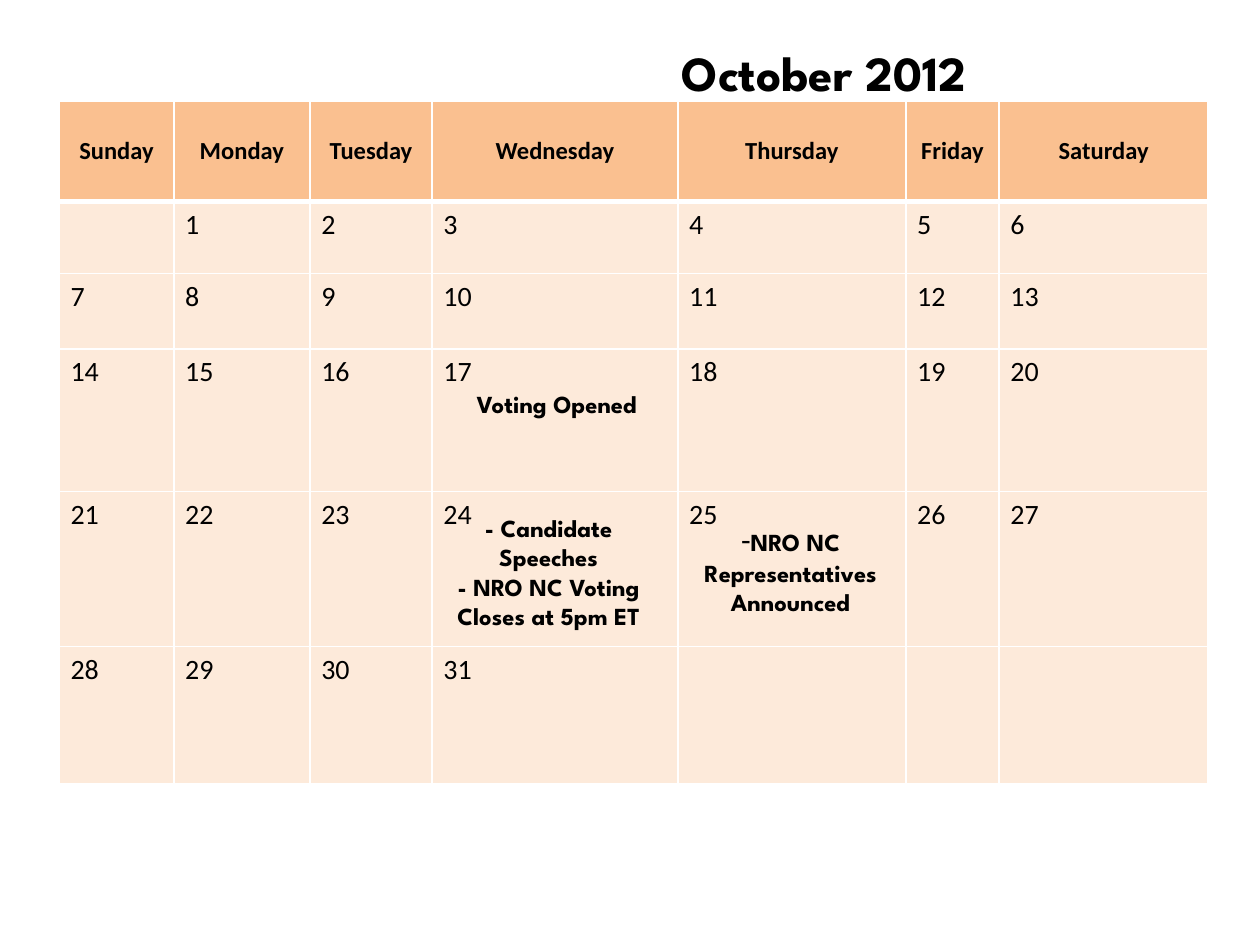
"""Build a one-slide October 2012 calendar with voting events."""
import pptx
import pptx.dml.color
import pptx.enum.text
import pptx.oxml
import pptx.oxml.ns
import pptx.util
from pptx.util import Inches

ALIGN = pptx.enum.text.PP_ALIGN
ANCHOR = pptx.enum.text.MSO_ANCHOR

DAYS = ["Sunday", "Monday", "Tuesday", "Wednesday", "Thursday", "Friday", "Saturday"]
FIRST_WEEKDAY, LAST_DATE = 1, 31
DAY_WIDTHS = [0.91, 1.08, 0.97, 1.95, 1.81, 0.74, 1.66]
WEEK_HEIGHTS = [0.8, 0.57, 0.6, 1.13, 1.23, 1.09]
HEADING_FILL, DATE_FILL, RULE = "FAC090", "FDEADA", "FFFFFF"

HEADING = {"name": "Calibri", "size": 14, "bold": True}
DATE = {"name": "Calibri", "size": 16, "bold": False}
DASH = {"name": "Calibri", "size": 18, "bold": False}
EVENT = {"name": "League Spartan", "size": 14, "bold": True}
TITLE = {"name": "League Spartan", "size": 28, "bold": True}

NOTES = [
    ((3.47, 0.29, 6.14, 0.57), [[("October 2012", TITLE)]]),
    ((3.58, 3.04, 1.68, 0.4), [[("Voting Opened", EVENT)]]),
    ((3.47, 4.02, 1.77, 1.04), [
        [("- Candidate Speeches", EVENT)],
        [("- NRO NC Voting Closes at 5pm ET", EVENT)],
    ]),
    ((5.35, 4.08, 1.85, 0.87), [
        [("-", DASH), ("NRO NC Representatives Announced", EVENT)],
    ]),
]


def color(value):
    return pptx.dml.color.RGBColor.from_string(value)


def write(paragraph, pieces, align):
    paragraph.alignment = align
    for words, style in pieces:
        run = paragraph.add_run()
        run.text = words
        for key, value in style.items():
            setattr(run.font, key, pptx.util.Pt(value) if key == "size" else value)
        run.font.color.rgb = color("000000")


def add_borders(cell, widths):
    properties = cell._tc.get_or_add_tcPr()
    for side, points in widths.items():
        properties.append(pptx.oxml.parse_xml(
            f'<a:ln{side} {pptx.oxml.ns.nsdecls("a")} w="{pptx.util.Pt(points)}">'
            f'<a:solidFill><a:srgbClr val="{RULE}"/></a:solidFill></a:ln{side}>'))


def add_calendar(slide):
    calendar = slide.shapes.add_table(
        len(WEEK_HEIGHTS), len(DAYS), Inches(0.47), Inches(0.8),
        Inches(sum(DAY_WIDTHS)), Inches(sum(WEEK_HEIGHTS))).table
    for column, width in zip(calendar.columns, DAY_WIDTHS):
        column.width = Inches(width)
    for row, height in zip(calendar.rows, WEEK_HEIGHTS):
        row.height = Inches(height)
    for week in range(len(WEEK_HEIGHTS)):
        for weekday, day in enumerate(DAYS):
            cell = calendar.cell(week, weekday)
            heading = week == 0
            add_borders(cell, {"L": 1, "R": 1, "T": 3 if week == 1 else 1, "B": 3 if heading else 1})
            cell.fill.solid()
            cell.fill.fore_color.rgb = color(HEADING_FILL if heading else DATE_FILL)
            cell.margin_left = cell.margin_right = Inches(0.09)
            cell.vertical_anchor = ANCHOR.MIDDLE if heading else ANCHOR.TOP
            date = (week - 1) * len(DAYS) + weekday - FIRST_WEEKDAY + 1
            paragraph = cell.text_frame.paragraphs[0]
            if heading:
                write(paragraph, [(day, HEADING)], ALIGN.CENTER)
            elif 1 <= date <= LAST_DATE:
                write(paragraph, [(str(date), DATE)], ALIGN.LEFT)


def add_note(slide, place, lines):
    frame = slide.shapes.add_textbox(*map(Inches, place)).text_frame
    frame.word_wrap = True
    for index, pieces in enumerate(lines):
        paragraph = frame.add_paragraph() if index else frame.paragraphs[0]
        write(paragraph, pieces, ALIGN.CENTER)


def main():
    deck = pptx.Presentation()
    deck.slide_width, deck.slide_height = Inches(10), Inches(7.5)
    slide = deck.slides.add_slide(deck.slide_layouts[6])
    add_calendar(slide)
    for place, lines in NOTES:
        add_note(slide, place, lines)
    deck.save("out.pptx")


if __name__ == "__main__":
    main()
